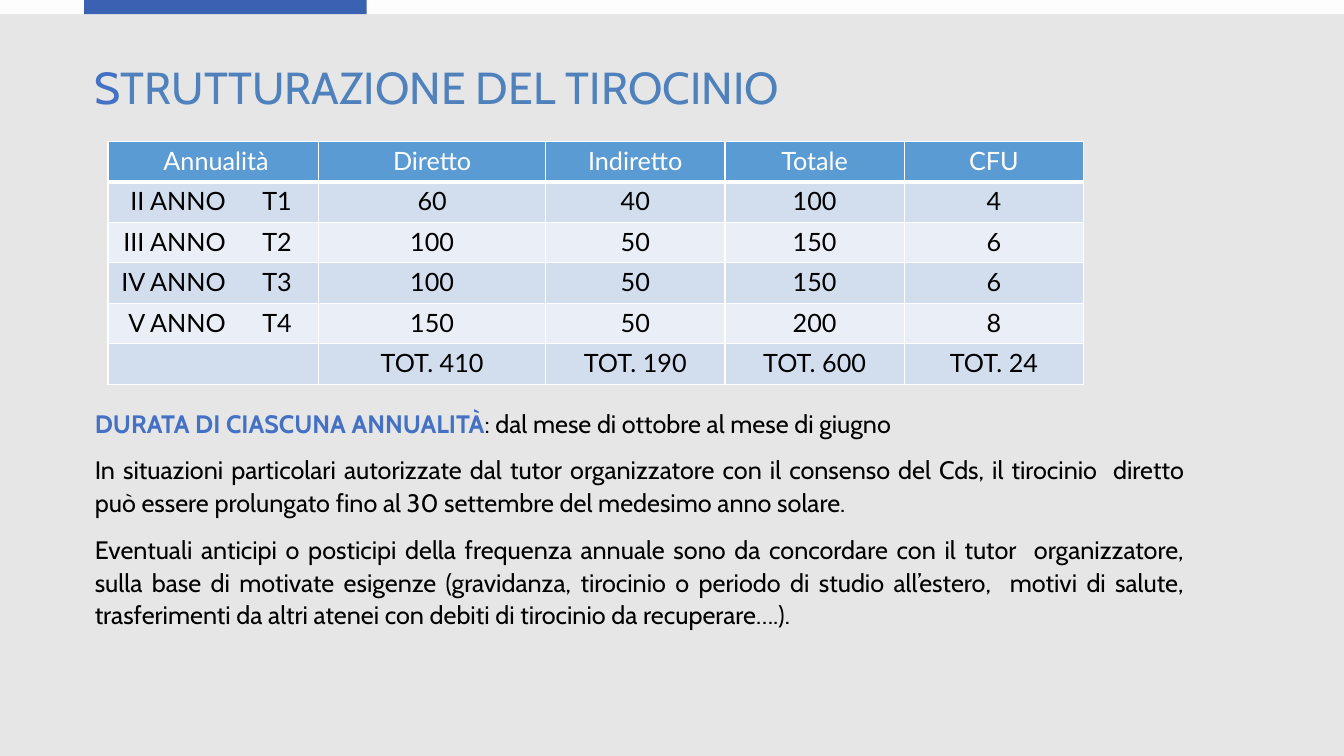
from lxml import etree
from pptx import Presentation
from pptx.dml.color import RGBColor
from pptx.enum.shapes import MSO_SHAPE
from pptx.enum.text import MSO_ANCHOR, PP_ALIGN
from pptx.oxml.ns import qn
from pptx.util import Cm, Pt

RECTANGLE = MSO_SHAPE.RECTANGLE
TOP = MSO_ANCHOR.TOP
LEFT, CENTER, RIGHT, JUSTIFY = PP_ALIGN.LEFT, PP_ALIGN.CENTER, PP_ALIGN.RIGHT, PP_ALIGN.JUSTIFY

COLORS = {
    "white": "FFFFFF", "black": "000000", "page": "E7E6E6", "strip": "FDFDFD",
    "accent": "3B61B3", "blue": "4471C4", "title": "4F81BD",
    "header": "5B9BD4", "band": "D2DEEE", "light": "EAEEF7",
}
PAGE_WIDTH, PAGE_HEIGHT, STRIP_HEIGHT = 33.87, 19.05, 0.36
TAB_LEFT, TAB_RIGHT = 2.12, 9.24

TITLE = {"name": "Cabin", "size": Pt(32)}
BODY = {"name": "Cabin", "size": Pt(18), "bold": False}
STRONG = {**BODY, "bold": True}
TABLE = {"name": "Lato", "size": Pt(18)}
JUSTIFIED = {"alignment": JUSTIFY, "line_spacing": 1.08, "space_before": Pt(10.2)}

COLUMN_WIDTHS = [3.43, 1.88, 5.72, 4.52, 4.52, 4.52]
ROW_HEIGHT = 1.02
ROWS = [
    ["Annualità", "", "Diretto", "Indiretto", "Totale", "CFU"],
    ["II ANNO", "T1", "60", "40", "100", "4"],
    ["III ANNO", "T2", "100", "50", "150", "6"],
    ["IV ANNO", "T3", "100", "50", "150", "6"],
    ["V ANNO", "T4", "150", "50", "200", "8"],
    ["", "", "TOT. 410", "TOT. 190", "TOT. 600", "TOT. 24"],
]
HEADER_ROW, TOTAL_ROW = 0, len(ROWS) - 1

PARAGRAPHS = [
    ({"alignment": LEFT}, [
        ("DURATA DI CIASCUNA ANNUALITÀ", STRONG, "blue"),
        (": dal mese di ottobre al mese di giugno", BODY, "black"),
    ]),
    (JUSTIFIED, [(
        "In situazioni particolari autorizzate dal tutor organizzatore con il consenso "
        "del Cds, il tirocinio  diretto può essere prolungato fino al 30 settembre del "
        "medesimo anno solare.", BODY, "black")]),
    (JUSTIFIED, [(
        "Eventuali anticipi o posticipi della frequenza annuale sono da concordare con "
        "il tutor  organizzatore, sulla base di motivate esigenze (gravidanza, tirocinio "
        "o periodo di studio all’estero,  motivi di salute, trasferimenti da altri atenei "
        "con debiti di tirocinio da recuperare….).", BODY, "black")]),
]


def apply(target, values):
    for name, value in values.items():
        setattr(target, name, value)


class SlideBuilder:
    def __init__(self, page, colors):
        self.page = page
        self.colors = colors

    def color(self, name):
        return RGBColor.from_string(self.colors[name])

    def paint(self, target, name):
        target.fill.solid()
        target.fill.fore_color.rgb = self.color(name)

    def rectangle(self, left, top, width, height, color):
        shape = self.page.shapes.add_shape(
            RECTANGLE, Cm(left), Cm(top), Cm(width), Cm(height))
        shape.shadow.inherit = False
        self.paint(shape, color)
        shape.line.fill.background()

    def paragraph(self, para, spans, values, left=0, right=0):
        properties = para._p.get_or_add_pPr()
        properties.set("marL", str(Cm(left)))
        properties.set("marR", str(Cm(right)))
        properties.set("indent", "0")
        apply(para, values)
        for text, font, color in spans:
            span = para.add_run()
            span.text = text
            apply(span.font, font)
            span.font.color.rgb = self.color(color)

    def text(self, left, top, width, height, paragraphs, inset, right=0):
        box = self.page.shapes.add_textbox(Cm(left), Cm(top), Cm(width), Cm(height))
        frame = box.text_frame
        apply(frame, {"word_wrap": True, "vertical_anchor": TOP, "margin_left": 0,
                      "margin_right": 0, "margin_top": Cm(inset), "margin_bottom": 0})
        for index, (values, spans) in enumerate(paragraphs):
            para = frame.add_paragraph() if index else frame.paragraphs[0]
            self.paragraph(para, spans, values, 0.03, right)

    def borders(self, cell, widths):
        properties = cell._tc.get_or_add_tcPr()
        for side, width in zip("LRTB", widths):
            line = etree.SubElement(properties, qn(f"a:ln{side}"), w=str(Pt(width)))
            if width:
                fill = etree.SubElement(line, qn("a:solidFill"))
                etree.SubElement(fill, qn("a:srgbClr"), val=self.colors["white"])
            else:
                etree.SubElement(line, qn("a:noFill"))

    def table(self, left, top, rows, widths, height):
        frame = self.page.shapes.add_table(
            len(rows), len(widths), Cm(left), Cm(top), Cm(sum(widths)), Cm(height * len(rows)))
        table = frame.table
        apply(table, {"first_row": False, "horz_banding": False})
        for column, width in zip(table.columns, widths):
            column.width = Cm(width)
        for row_index, values in enumerate(rows):
            table.rows[row_index].height = Cm(height)
            for column_index, text in enumerate(values):
                self.cell(table.cell(row_index, column_index), text, row_index, column_index)
        for row_index in (HEADER_ROW, TOTAL_ROW):
            table.cell(row_index, 0).merge(table.cell(row_index, 1))

    def cell(self, cell, text, row, column):
        header = row == HEADER_ROW
        split = HEADER_ROW < row < TOTAL_ROW
        self.borders(cell, [
            0 if split and column == 1 else 1,
            0 if split and column == 0 else 1,
            3 if row == HEADER_ROW + 1 else 1,
            3 if header else 1,
        ])
        self.paint(cell, "header" if header else "band" if row % 2 else "light")
        apply(cell, {"margin_left": 0, "margin_right": 0, "margin_top": Cm(0.1),
                     "margin_bottom": 0, "vertical_anchor": TOP})
        if not text:
            return
        alignment, left, right = CENTER, 0, 0
        if header and column == 0:
            alignment, left = LEFT, 1.4
        elif column == 0:
            alignment, right = RIGHT, 0.46
        elif column == 1:
            alignment, left = LEFT, 0.46
        spans = [(text, TABLE, "white" if header else "black")]
        self.paragraph(cell.text_frame.paragraphs[0], spans, {"alignment": alignment}, left, right)


def main():
    deck = Presentation()
    deck.slide_width, deck.slide_height = Cm(PAGE_WIDTH), Cm(PAGE_HEIGHT)
    builder = SlideBuilder(deck.slides.add_slide(deck.slide_layouts[6]), COLORS)
    builder.rectangle(0, STRIP_HEIGHT, PAGE_WIDTH, PAGE_HEIGHT - STRIP_HEIGHT, "page")
    for left, right, color in [(0, TAB_LEFT, "strip"), (TAB_RIGHT, PAGE_WIDTH, "strip"),
                               (TAB_LEFT, TAB_RIGHT, "accent")]:
        builder.rectangle(left, 0, right - left, STRIP_HEIGHT, color)
    heading = [("S", TITLE, "blue"), ("TRUTTURAZIONE DEL TIROCINIO", TITLE, "title")]
    builder.text(2.36, 1.47, 17.68, 1.4, [({"alignment": LEFT}, heading)], 0.03)
    builder.table(2.72, 3.56, ROWS, COLUMN_WIDTHS, ROW_HEIGHT)
    builder.text(2.36, 9.98, 28.73, 5.18, PARAGRAPHS, 0.3, right=1.24)
    deck.save("out.pptx")


if __name__ == "__main__":
    main()
